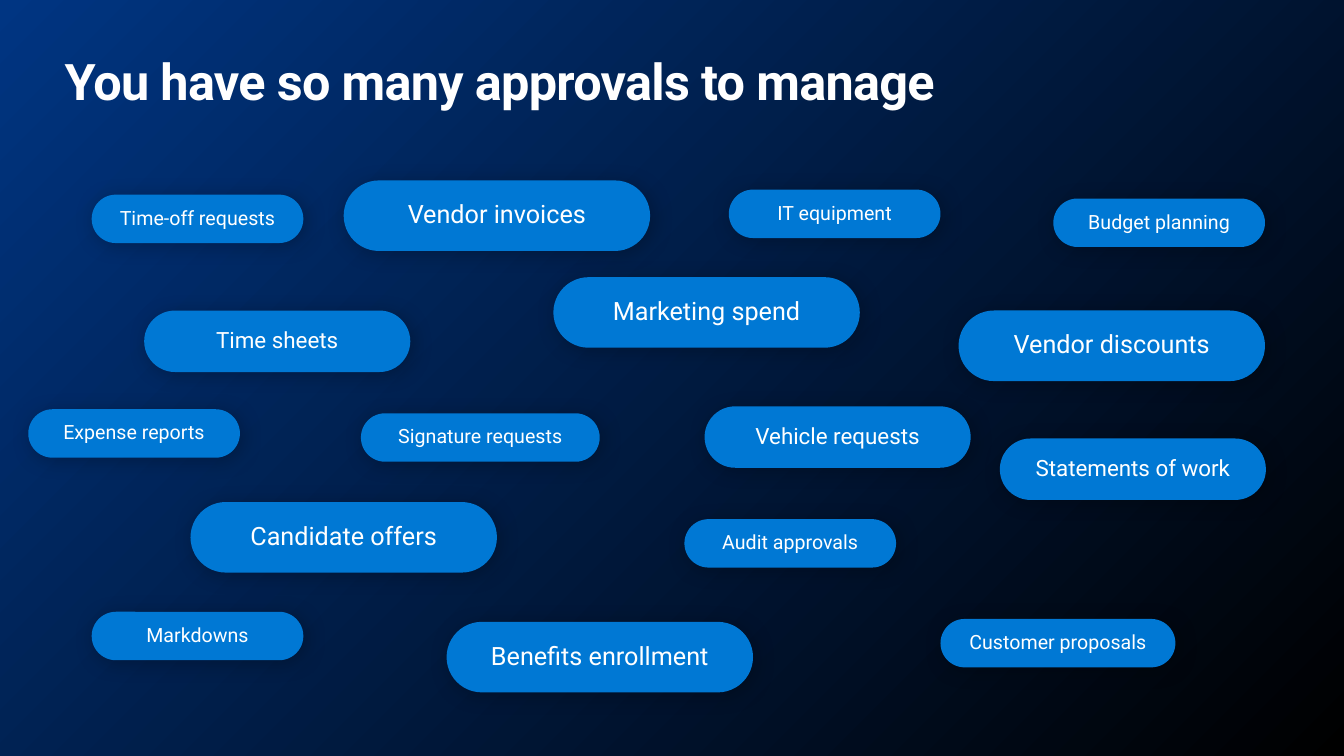
from dataclasses import dataclass

from lxml import etree
from pptx import Presentation
from pptx import util as u
from pptx.dml.color import RGBColor
from pptx.enum import shapes, text
from pptx.oxml import ns

NAVY = RGBColor(0x00, 0x35, 0x82)
BLACK = RGBColor(0x00, 0x00, 0x00)
BLUE = RGBColor(0x00, 0x78, 0xD4)
WHITE = RGBColor(0xFF, 0xFF, 0xFF)
FONT = "Roboto"


@dataclass(frozen=True)
class PillSize:
    width: float
    height: float
    font_size: int


SMALL = PillSize(151.2, 34.6, 14)
SIGNATURE = PillSize(170.6, 34.6, 14)
PROPOSAL = PillSize(167.8, 34.6, 14)
MEDIUM = PillSize(190.1, 43.9, 16)
LARGE = PillSize(218.9, 50.4, 18)


@dataclass(frozen=True)
class Pill:
    label: str
    left: float
    top: float
    size: PillSize


PILLS = [
    Pill("Time-off requests", 65.5, 139, SMALL),
    Pill("Vendor invoices", 245.5, 128.9, LARGE),
    Pill("Vendor discounts", 684.7, 221.8, LARGE),
    Pill("Budget planning", 752.4, 141.8, SMALL),
    Pill("Time sheets", 103, 221.8, MEDIUM),
    Pill("Marketing spend", 395.3, 198, LARGE),
    Pill("Expense reports", 20.2, 292.3, SMALL),
    Pill("IT equipment", 520.6, 135.4, SMALL),
    Pill("Markdowns", 65.5, 437, SMALL),
    Pill("Signature requests", 257.8, 295.2, SIGNATURE),
    Pill("Vehicle requests", 503.3, 290.2, MEDIUM),
    Pill("Benefits enrollment", 319, 444.2, LARGE),
    Pill("Candidate offers", 136.1, 358.6, LARGE),
    Pill("Audit approvals", 488.9, 370.8, SMALL),
    Pill("Statements of work", 714.2, 313.2, MEDIUM),
    Pill("Customer proposals", 671.8, 442.1, PROPOSAL),
]


def set_margins(frame, horizontal: float, vertical: float) -> None:
    frame.margin_left = frame.margin_right = u.Pt(horizontal)
    frame.margin_top = frame.margin_bottom = u.Pt(vertical)


def format_font(font, size: int, bold: bool = False) -> None:
    font.name = FONT
    font.size = u.Pt(size)
    font.bold = bold
    font.color.rgb = WHITE


def add_soft_shadow(shape) -> None:
    shape.shadow.inherit = False
    effects = shape._element.spPr.find(ns.qn("a:effectLst"))
    shadow = etree.SubElement(
        effects, ns.qn("a:outerShdw"), blurRad=str(u.Pt(15)), dist=str(u.Pt(3)),
        dir="2700000", algn="tl", rotWithShape="0")
    color = etree.SubElement(shadow, ns.qn("a:srgbClr"), val=str(BLACK))
    etree.SubElement(color, ns.qn("a:alpha"), val="25000")


def paint_background(slide) -> None:
    fill = slide.background.fill
    fill.gradient()
    fill.gradient_angle = 315
    for stop, color in zip(fill.gradient_stops, (NAVY, BLACK)):
        stop.color.rgb = color


def write_title(slide, wording: str) -> None:
    title = slide.shapes.title
    title.left, title.top = u.Pt(46.1), u.Pt(36)
    title.width, title.height = u.Pt(867.6), u.Pt(43.9)
    frame = title.text_frame
    frame.text = wording
    frame.word_wrap = True
    frame.auto_size = text.MSO_AUTO_SIZE.SHAPE_TO_FIT_TEXT
    frame.vertical_anchor = text.MSO_ANCHOR.TOP
    set_margins(frame, 0, 0)
    paragraph = frame.paragraphs[0]
    paragraph.alignment = text.PP_ALIGN.LEFT
    run = paragraph.runs[0]
    format_font(run.font, 36, bold=True)
    run._r.get_or_add_rPr().set("spc", "-50")


def add_pill(slide, pill: Pill) -> None:
    shape = slide.shapes.add_shape(
        shapes.MSO_SHAPE.ROUNDED_RECTANGLE, u.Pt(pill.left), u.Pt(pill.top),
        u.Pt(pill.size.width), u.Pt(pill.size.height))
    shape.adjustments[0] = 0.5
    shape.fill.solid()
    shape.fill.fore_color.rgb = BLUE
    shape.line.fill.background()
    add_soft_shadow(shape)
    frame = shape.text_frame
    frame.text = pill.label
    frame.word_wrap = True
    frame.vertical_anchor = text.MSO_ANCHOR.MIDDLE
    set_margins(frame, 14.4, 11.5)
    paragraph = frame.paragraphs[0]
    paragraph.alignment = text.PP_ALIGN.CENTER
    paragraph.line_spacing = 0.9
    format_font(paragraph.runs[0].font, pill.size.font_size)


def main() -> None:
    presentation = Presentation()
    presentation.slide_width, presentation.slide_height = u.Pt(960), u.Pt(540)
    slide = presentation.slides.add_slide(presentation.slide_layouts[5])
    paint_background(slide)
    write_title(slide, "You have so many approvals to manage")
    for pill in PILLS:
        add_pill(slide, pill)
    presentation.save("out.pptx")


if __name__ == "__main__":
    main()
